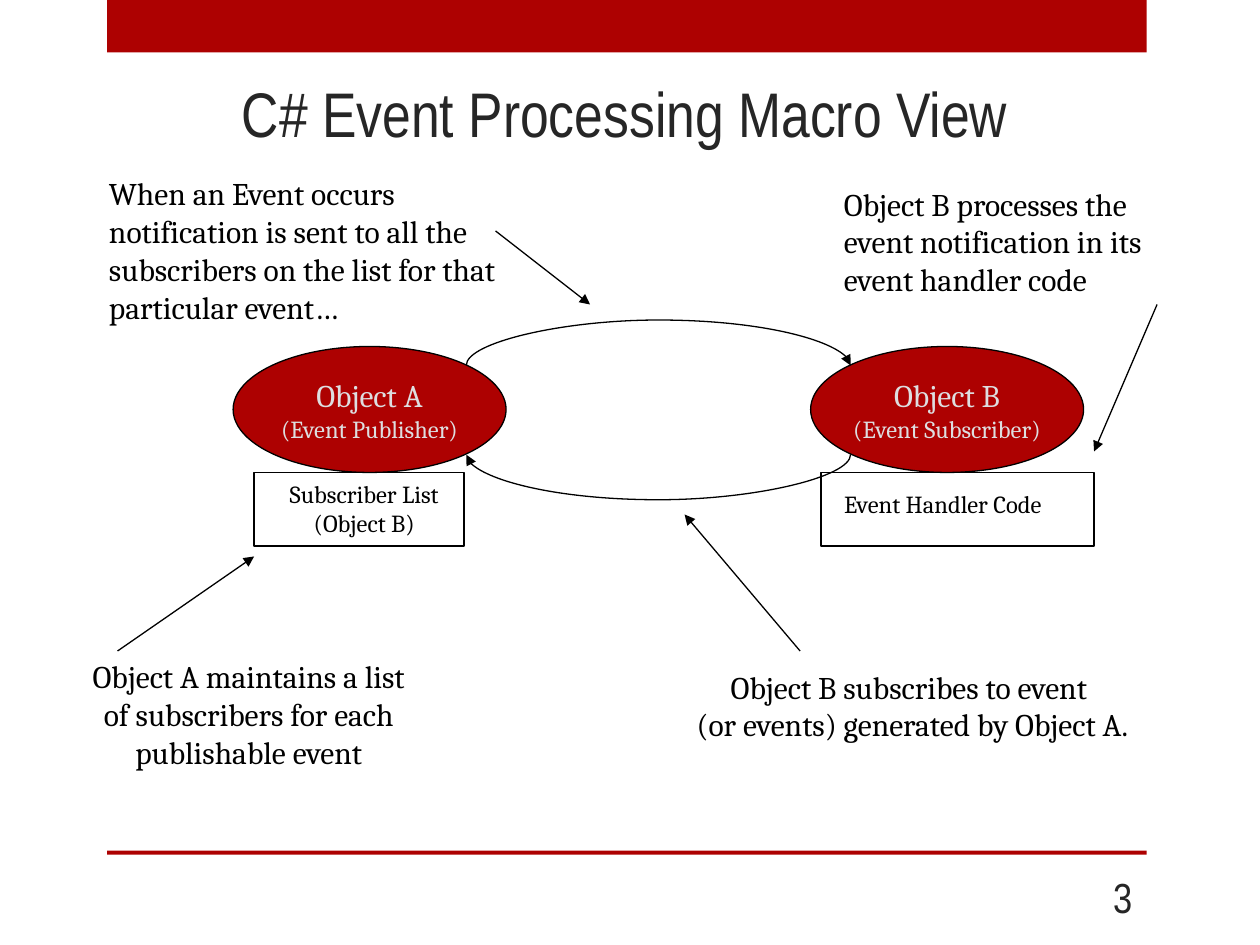
import pptx
import pptx.util
import pptx.dml.color
import pptx.enum.shapes
import pptx.enum.text
import pptx.oxml.ns
from lxml import etree
from collections import namedtuple

COLORS = {"red": "AD0101", "ink": "000000", "title": "262626", "pale": "DEDEE0"}
HEAD_FONT, BODY_FONT = "Arial Narrow", "Cambria"
CELL = 1 / 12  # the page is a grid of 120 columns by 90 rows
Box = namedtuple("Box", "left top width height")
SHAPES = pptx.enum.shapes.MSO_SHAPE
CONNECTORS = pptx.enum.shapes.MSO_CONNECTOR
ALIGN = pptx.enum.text.PP_ALIGN
ANCHOR = pptx.enum.text.MSO_ANCHOR
qn = pptx.oxml.ns.qn


def grid(cells):
    return pptx.util.Inches(cells * CELL)


def color(name):
    return pptx.dml.color.RGBColor.from_string(COLORS[name])


def inside(box, left, top, width, height):
    """A box given by its offset from the corner of another."""
    return Box(box.left + left, box.top + top, width, height)


def write(frame, lines, sizes, align, ink="ink", font=BODY_FONT, wrap=False, anchor=ANCHOR.TOP):
    frame.word_wrap = wrap
    frame.vertical_anchor = anchor
    for index, (line, size) in enumerate(zip(lines, sizes)):
        para = frame.paragraphs[0] if index == 0 else frame.add_paragraph()
        para.text = line
        para.alignment = align
        para.font.name = font
        para.font.size = pptx.util.Pt(size)
        para.font.color.rgb = color(ink)


def add_text(page, box, lines, size=18, align=ALIGN.LEFT, **style):
    label = page.shapes.add_textbox(*map(grid, box))
    write(label.text_frame, lines, [size] * len(lines), align, **style)


def add_block(page, kind, box, fill=None, line=None):
    block = page.shapes.add_shape(kind, *map(grid, box))
    block.shadow.inherit = False
    if fill:
        block.fill.solid()
        block.fill.fore_color.rgb = color(fill)
    else:
        block.fill.background()
    if line:
        block.line.color.rgb = color(line)
        block.line.width = pptx.util.Pt(0.75)
    else:
        block.line.fill.background()
    return block


def add_arrow(page, start, end, kind=CONNECTORS.STRAIGHT):
    arrow = page.shapes.add_connector(kind, *map(grid, (*start, *end)))
    arrow.line.color.rgb = color("ink")
    arrow.line.width = pptx.util.Pt(0.75)
    etree.SubElement(arrow.line._get_or_add_ln(), qn("a:tailEnd"), type="triangle")
    etree.SubElement(arrow._element.spPr, qn("a:effectLst"))
    return arrow


def add_arc(page, box, source, target, site_pair, rightward):
    """A curve across the box, bulging up when rightward and down otherwise."""
    center = box.left + box.width / 2
    middle = box.top + box.height / 2
    reach = box.width / 2 if rightward else -box.width / 2
    arc = add_arrow(page, (center, middle + reach), (center, middle - reach), CONNECTORS.CURVE)
    # A quarter turn lays the upright curve flat; the bend is a multiple of its tiny width
    arc.width = pptx.util.Emu(1588)
    properties = arc._element.spPr
    properties.find(qn("a:xfrm")).set("rot", "5400000")
    guides = properties.find(qn("a:prstGeom")).find(qn("a:avLst"))
    bend = -22800000 if rightward else 22800000
    etree.SubElement(guides, qn("a:gd"), name="adj1", fmla=f"val {bend}")
    # Join the curve to the slanted sites of the ellipses
    joints = arc._element.find(qn("p:nvCxnSpPr")).find(qn("p:cNvCxnSpPr"))
    for tag, shape, site in zip(("a:stCxn", "a:endCxn"), (source, target), site_pair):
        etree.SubElement(joints, qn(tag), id=str(shape.shape_id), idx=str(site))


def add_frame(page, box):
    # Bands, title and page number
    add_block(page, SHAPES.RECTANGLE, inside(box, 0, 0, box.width, 5), "red")
    add_block(page, SHAPES.RECTANGLE, inside(box, 0, 81, box.width, 0.4), "red")
    add_text(page, inside(box, -0.2, 6.4, box.width, 8.6), ["C# Event Processing Macro View"],
             36, ALIGN.CENTER, ink="title", font=HEAD_FONT, wrap=True, anchor=ANCHOR.MIDDLE)
    add_text(page, inside(box, box.width - 10.2, 83, 10, 4.8), ["3"],
             24, ALIGN.RIGHT, ink="title", font=HEAD_FONT, wrap=True, anchor=ANCHOR.MIDDLE)


def add_party(page, box, name, role):
    party = add_block(page, SHAPES.OVAL, box, "red", "ink")
    write(party.text_frame, [name, role], [18, 14], ALIGN.CENTER, "pale", anchor=ANCHOR.MIDDLE)
    return party


def add_store(page, box, lines, text_top, text_width, align):
    add_block(page, SHAPES.RECTANGLE, box, line="ink")
    text_box = inside(box, 1, text_top, text_width, box.height - 2 * text_top)
    add_text(page, text_box, lines, 14, align)


def add_note(page, box, lines, start, end, align=ALIGN.LEFT, wrap=False):
    """A remark with its arrow, whose ends are offsets from the box."""
    add_text(page, box, lines, align=align, wrap=wrap)
    add_arrow(page, *((box.left + x, box.top + y) for x, y in (start, end)))


def add_diagram(page, box):
    # Publisher and subscriber
    subscriber = add_party(page, inside(box, 55, 0, 26, 12), "Object B", "(Event Subscriber)")
    publisher = add_party(page, inside(box, 0, 0, 26, 12), "Object A", "(Event Publisher)")
    add_store(page, inside(box, 2, 12, 20, 7), ["Subscriber List", "(Object B)"],
              0, 19, ALIGN.CENTER)
    add_store(page, inside(box, 56, 12, 26, 7), ["Event Handler Code"], 1, 24.4, ALIGN.LEFT)

    # Subscription and notification curves
    gap = inside(box, 22.2, 1.8, 36.6, 0)
    add_arc(page, gap._replace(top=box.top + 10.3), subscriber, publisher, (3, 5), False)
    add_arc(page, gap, publisher, subscriber, (7, 1), True)


def add_notes(page, box):
    add_note(page, inside(box, 53, 47, 49.4, 8.4),
             ["Object B subscribes to event ", "(or events) generated by Object A."],
             (14, -1), (3, -14), ALIGN.CENTER)
    add_note(page, inside(box, -3, 46, 35, 12),
             ["Object A maintains a list of subscribers for each publishable event"],
             (5, 0), (18, -9), ALIGN.CENTER, wrap=True)
    add_note(page, inside(box, 0, 0, 41.2, 15.6),
             ["When an Event occurs notification is sent to all the subscribers on the list "
              "for that particular event…"], (38, 6), (47, 13), wrap=True)
    add_note(page, inside(box, 70, 1, 34.6, 12),
             ["Object B processes the", "event notification in its", "event handler code"],
             (31, 12), (25, 26))


def main():
    deck = pptx.Presentation()
    deck.slide_width, deck.slide_height = grid(120), grid(90)
    page = deck.slides.add_slide(deck.slide_layouts[6])
    add_frame(page, Box(10.2, 0, 99, 90))
    add_diagram(page, Box(22.2, 33, 81, 19))
    add_notes(page, Box(9.2, 16, 104, 59))
    deck.save("out.pptx")


if __name__ == "__main__":
    main()
